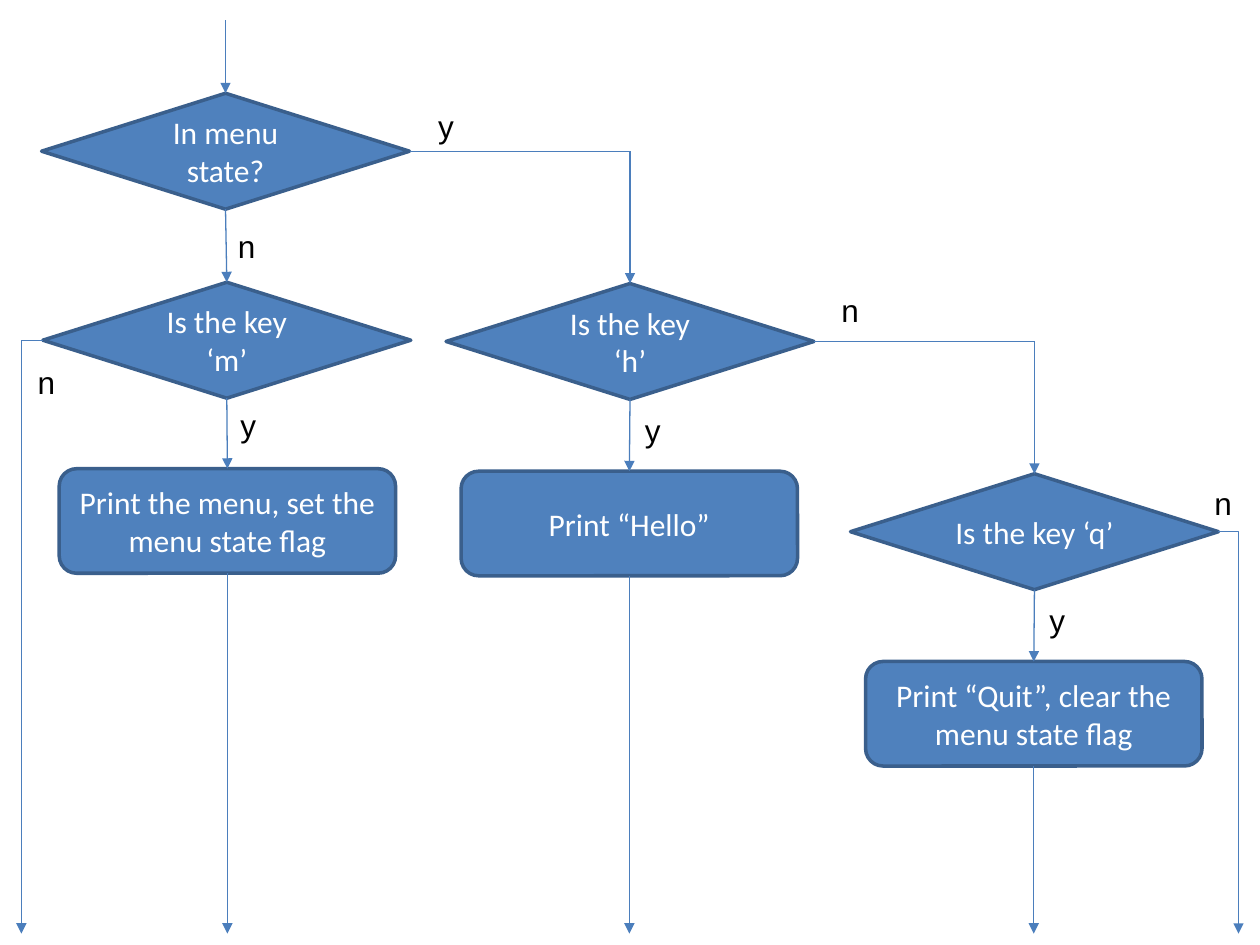
from dataclasses import dataclass
from typing import Optional

from lxml import etree
from pptx import Presentation
from pptx.dml.color import RGBColor
from pptx.enum import shapes, text
from pptx.oxml import ns
from pptx.util import Inches, Pt

COLORS = {"fill": "4F81BD", "outline": "3A5F8C", "flow": "4B7EBC",
          "node_text": "FFFFFF", "label": "000000"}
DECISION = shapes.MSO_SHAPE.FLOWCHART_DECISION
ACTION = shapes.MSO_SHAPE.ROUNDED_RECTANGLE
SIZES = {DECISION: (2.92, 0.92), ACTION: (2.67, 0.83)}
TOP, LEFT, BOTTOM, RIGHT = range(4)
EXIT_Y = 7.41


@dataclass
class Node:
    kind: int
    left: float
    top: float
    caption: str
    sp: Optional[object] = None

    def site(self, side: int) -> tuple[float, float]:
        w, h = SIZES[self.kind]
        dx, dy = [(w / 2, 0), (0, h / 2), (w / 2, h), (w, h / 2)][side]
        return self.left + dx, self.top + dy


@dataclass
class End:
    """A connector end: on a side of a node, or free at a point."""
    x: float
    y: float
    node: Optional[Node] = None
    side: int = TOP


def on(node: Node, side: int) -> End:
    return End(*node.site(side), node, side)


def add_run(p, words: str, font: str, color: str) -> None:
    r = p.add_run()
    r.text = words
    r.font.name = font
    r.font.size = Pt(18)
    r.font.color.rgb = RGBColor.from_string(COLORS[color])


def draw_node(s, node: Node) -> None:
    w, h = SIZES[node.kind]
    sp = s.shapes.add_shape(node.kind, Inches(node.left), Inches(node.top),
                            Inches(w), Inches(h))
    sp.shadow.inherit = False
    sp.fill.solid()
    sp.fill.fore_color.rgb = RGBColor.from_string(COLORS["fill"])
    sp.line.color.rgb = RGBColor.from_string(COLORS["outline"])
    sp.line.width = Pt(2)
    tf = sp.text_frame
    tf.word_wrap = True
    tf.vertical_anchor = text.MSO_ANCHOR.MIDDLE
    p = tf.paragraphs[0]
    p.alignment = text.PP_ALIGN.CENTER
    add_run(p, node.caption, "Calibri", "node_text")
    node.sp = sp


def draw_flow(s, start: End, end: End, arrow: bool = True, bent: bool = False) -> None:
    kind = shapes.MSO_CONNECTOR.ELBOW if bent else shapes.MSO_CONNECTOR.STRAIGHT
    cx = s.shapes.add_connector(kind, Inches(start.x), Inches(start.y),
                                Inches(end.x), Inches(end.y))
    cx.line.color.rgb = RGBColor.from_string(COLORS["flow"])
    cx.line.width = Pt(0.75)
    sp_pr = cx.element.spPr
    if arrow:
        tail = etree.SubElement(sp_pr.find(ns.qn("a:ln")), ns.qn("a:tailEnd"))
        tail.set("type", "triangle")
    etree.SubElement(sp_pr, ns.qn("a:effectLst"))
    if bent:  # a single corner: sideways, then down
        sp_pr.find(ns.qn("a:prstGeom")).set("prst", "bentConnector2")
        return
    if start.node:
        cx.begin_connect(start.node.sp, start.side)
    if end.node:
        cx.end_connect(end.node.sp, end.side)


def draw_label(s, words: str, left: float, top: float) -> None:
    tb = s.shapes.add_textbox(Inches(left), Inches(top), Inches(0.34), Inches(0.4))
    tf = tb.text_frame
    tf.word_wrap = False
    tf.auto_size = text.MSO_AUTO_SIZE.SHAPE_TO_FIT_TEXT
    add_run(tf.paragraphs[0], words, "Arial", "label")


def main() -> None:
    prs = Presentation()
    prs.slide_width, prs.slide_height = Inches(10), Inches(7.5)
    s = prs.slides.add_slide(prs.slide_layouts[6])

    # Decisions and actions
    in_menu = Node(DECISION, 0.33, 0.74, "In menu state?")
    key_m = Node(DECISION, 0.34, 2.24, "Is the key ‘m’")
    key_h = Node(DECISION, 3.54, 2.25, "Is the key ‘h’")
    key_q = Node(DECISION, 6.75, 3.76, "Is the key ‘q’")
    show_menu = Node(ACTION, 0.47, 3.72, "Print the menu, set the menu state flag")
    say_hello = Node(ACTION, 3.66, 3.74, "Print “Hello”")
    say_quit = Node(ACTION, 6.87, 5.25, "Print “Quit”, clear the menu state flag")
    for node in (in_menu, key_m, key_h, key_q, show_menu, say_hello, say_quit):
        draw_node(s, node)

    # Entry, then straight steps down each column
    entry = on(in_menu, TOP)
    draw_flow(s, End(entry.x, 0.16), entry)
    for upper, lower in ((in_menu, key_m), (key_m, show_menu),
                         (key_h, say_hello), (key_q, say_quit)):
        draw_flow(s, on(upper, BOTTOM), on(lower, TOP))

    # Steps across to the next column
    for origin, target in ((in_menu, key_h), (key_h, key_q)):
        start, end = on(origin, RIGHT), on(target, TOP)
        corner = End(end.x, start.y)
        draw_flow(s, start, corner, arrow=False)
        draw_flow(s, corner, end)

    # Exits at the foot of the chart
    for action in (show_menu, say_hello, say_quit):
        start = on(action, BOTTOM)
        draw_flow(s, start, End(start.x, EXIT_Y))
    for decision, side, x in ((key_m, LEFT, 0.17), (key_q, RIGHT, 9.83)):
        draw_flow(s, on(decision, side), End(x, EXIT_Y), bent=True)

    # Yes and no labels
    for words, left, top in (("n", 1.79, 1.75), ("y", 1.81, 3.17), ("y", 5.02, 3.21),
                             ("y", 8.23, 4.72), ("y", 3.38, 0.8), ("n", 6.58, 2.26),
                             ("n", 9.54, 3.79), ("n", 0.2, 2.83)):
        draw_label(s, words, left, top)

    prs.save("out.pptx")


if __name__ == "__main__":
    main()
